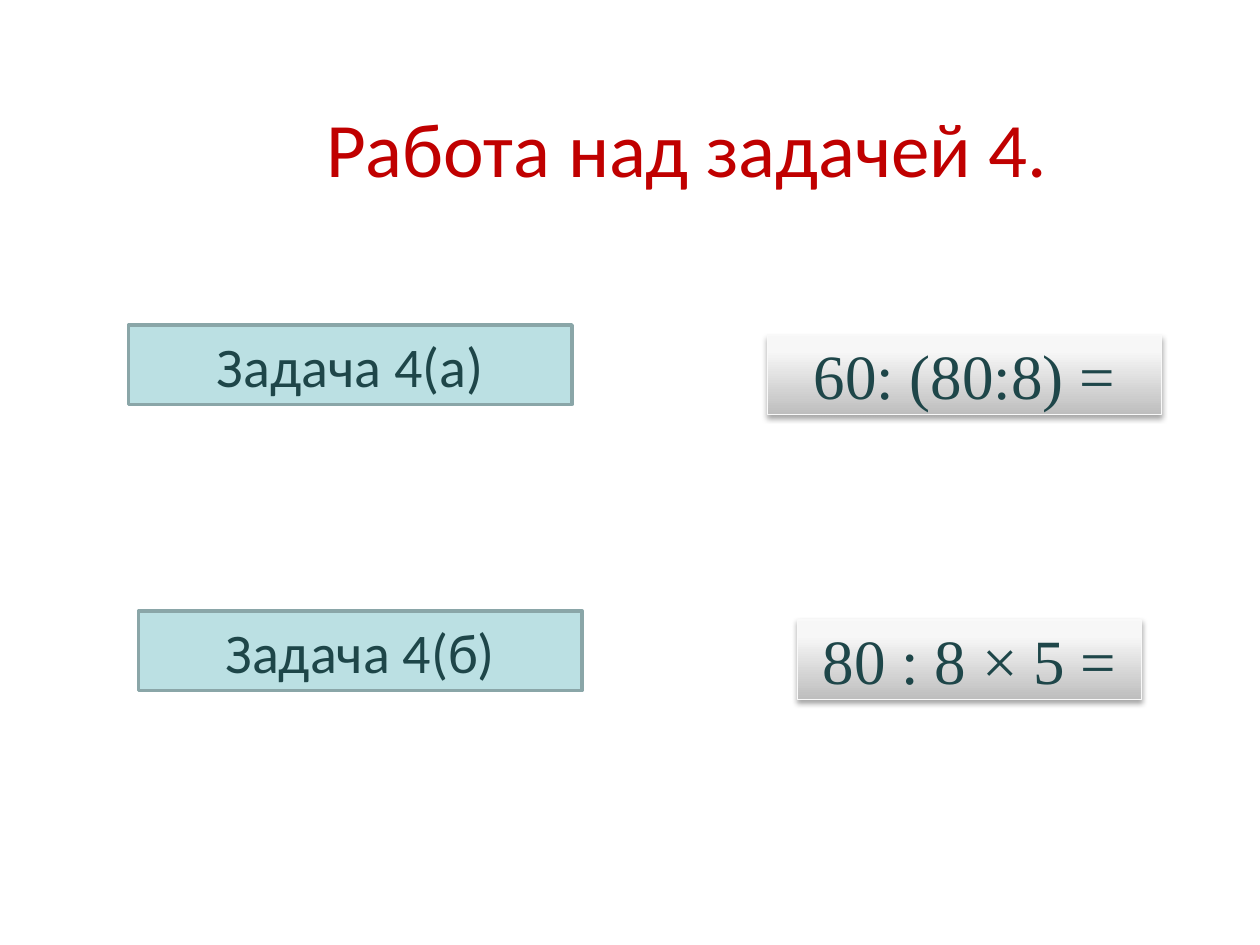
"""Build the slide that pairs two tasks with their expressions."""
import copy

import lxml.etree
import pptx
import pptx.dml.color
import pptx.enum.shapes
import pptx.enum.text
import pptx.oxml.ns
import pptx.util
from pptx.util import Inches


def rgb(value):
    return pptx.dml.color.RGBColor.from_string(value)


def write(box, text, size, font, color):
    frame = box.text_frame
    frame.word_wrap = True
    frame.vertical_anchor = pptx.enum.text.MSO_ANCHOR.MIDDLE
    paragraph = frame.paragraphs[0]
    paragraph.text = text
    paragraph.alignment = pptx.enum.text.PP_ALIGN.CENTER
    paragraph.font.size = pptx.util.Pt(size)
    paragraph.font.name = font
    paragraph.font.color.rgb = rgb(color)


qn = pptx.oxml.ns.qn
RECTANGLE = pptx.enum.shapes.MSO_SHAPE.RECTANGLE
INK = "1E4649"
HEIGHT = Inches(0.63)

presentation = pptx.Presentation()
presentation.slide_width = Inches(10)
presentation.slide_height = Inches(7.5)
slide = presentation.slides.add_slide(presentation.slide_layouts[6])

title = slide.shapes.add_textbox(Inches(1.41), Inches(0.78), Inches(8.09), Inches(0.77))
write(title, "Работа над задачей 4.", 44, "Calibri", "C00000")

for text, left, top in [("Задача 4(а)", 1.02, 2.58), ("Задача 4(б)", 1.1, 4.85)]:
    task = slide.shapes.add_shape(RECTANGLE, Inches(left), Inches(top), Inches(3.52), HEIGHT)
    task.shadow.inherit = False
    task.fill.solid()
    task.fill.fore_color.rgb = rgb("BBE0E3")
    task.line.color.rgb = rgb("8AA6A8")
    task.line.width = pptx.util.Pt(2)
    write(task, text, 32, "Calibri", INK)

for text, left, top, width in [
    ("60: (80:8) =", 6.09, 2.66, 3.13),
    ("80 : 8 × 5 =", 6.33, 4.92, 2.73),
]:
    expression = slide.shapes.add_shape(RECTANGLE, Inches(left), Inches(top), Inches(width), HEIGHT)
    expression.fill.gradient()
    expression.fill.gradient_angle = 90
    properties = expression.element.spPr
    stop_list = properties.find(".//" + qn("a:gsLst"))
    stop_list.append(copy.deepcopy(stop_list[-1]))
    stops = [(0, "BEBEBE"), (0.8, "F7F7F7"), (1, "F8F8F8")]
    for stop, (position, color) in zip(expression.fill.gradient_stops, stops):
        stop.position = position
        stop.color.rgb = rgb(color)
    expression.line.color.rgb = rgb("F9F9F9")
    expression.line.width = pptx.util.Pt(0.75)
    expression.shadow.inherit = False
    shadow = lxml.etree.SubElement(
        properties.find(qn("a:effectLst")), qn("a:outerShdw"),
        blurRad=str(pptx.util.Pt(3.1)), dist=str(pptx.util.Pt(1.8)),
        dir="5400000", rotWithShape="0",
    )
    shade = lxml.etree.SubElement(shadow, qn("a:srgbClr"), val="000000")
    lxml.etree.SubElement(shade, qn("a:alpha"), val="35000")
    write(expression, text, 36, "Times New Roman", INK)

presentation.save("out.pptx")
